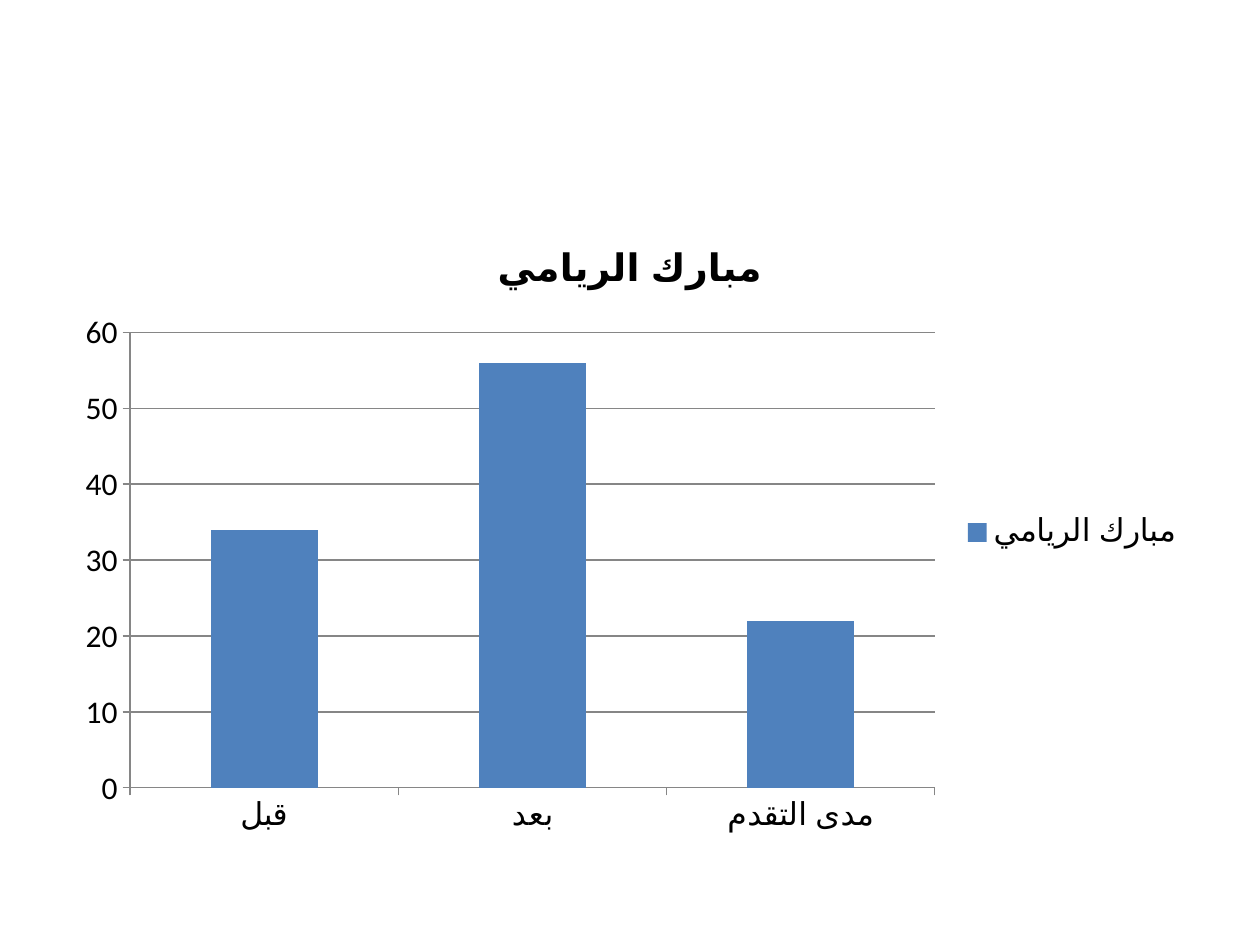
"""Build a slide with a column chart of results before, after and progress."""
from pptx import Presentation
from pptx.chart.data import CategoryChartData
from pptx.dml.color import RGBColor
from pptx.enum.chart import XL_CHART_TYPE, XL_LEGEND_POSITION, XL_TICK_MARK
from pptx.util import Cm, Pt

COLUMN = XL_CHART_TYPE.COLUMN_CLUSTERED
RIGHT = XL_LEGEND_POSITION.RIGHT
OUTSIDE = XL_TICK_MARK.OUTSIDE

NAME = "مبارك الريامي"
RESULTS = {"قبل": 34, "بعد": 56, "مدى التقدم": 22}
FONT = "Calibri"
BLACK = RGBColor(0x00, 0x00, 0x00)
BLUE = RGBColor(0x4F, 0x81, 0xBD)
GRAY = RGBColor(0x86, 0x86, 0x86)


def style_font(font, size, bold=False):
    font.name = FONT
    font.size = Pt(size)
    font.bold = bold
    font.color.rgb = BLACK


def style_line(line):
    line.color.rgb = GRAY
    line.width = Pt(0.75)


def add_results_chart(slide):
    data = CategoryChartData()
    data.categories = list(RESULTS)
    data.add_series(NAME, list(RESULTS.values()))
    chart = slide.shapes.add_chart(
        COLUMN, Cm(1.27), Cm(4.45), Cm(22.86), Cm(12.57), data
    ).chart
    style_font(chart.font, 18)

    chart.has_title = True
    run = chart.chart_title.text_frame.paragraphs[0].add_run()
    run.text = NAME
    style_font(run.font, 21.6, bold=True)
    chart.chart_title.include_in_layout = False

    chart.has_legend = True
    chart.legend.position = RIGHT
    chart.legend.include_in_layout = False

    plot = chart.plots[0]
    plot.gap_width = 150
    plot.vary_by_categories = False
    fill = plot.series[0].format.fill
    fill.solid()
    fill.fore_color.rgb = BLUE

    for axis in (chart.category_axis, chart.value_axis):
        axis.major_tick_mark = OUTSIDE
        style_line(axis.format.line)
    value_axis = chart.value_axis
    value_axis.minimum_scale = 0
    value_axis.maximum_scale = 60
    value_axis.major_unit = 10
    value_axis.has_major_gridlines = True
    style_line(value_axis.major_gridlines.format.line)


def main():
    presentation = Presentation()
    presentation.slide_width = Cm(25.4)
    presentation.slide_height = Cm(19.05)
    slide = presentation.slides.add_slide(presentation.slide_layouts[6])
    add_results_chart(slide)
    presentation.save("out.pptx")


if __name__ == "__main__":
    main()
